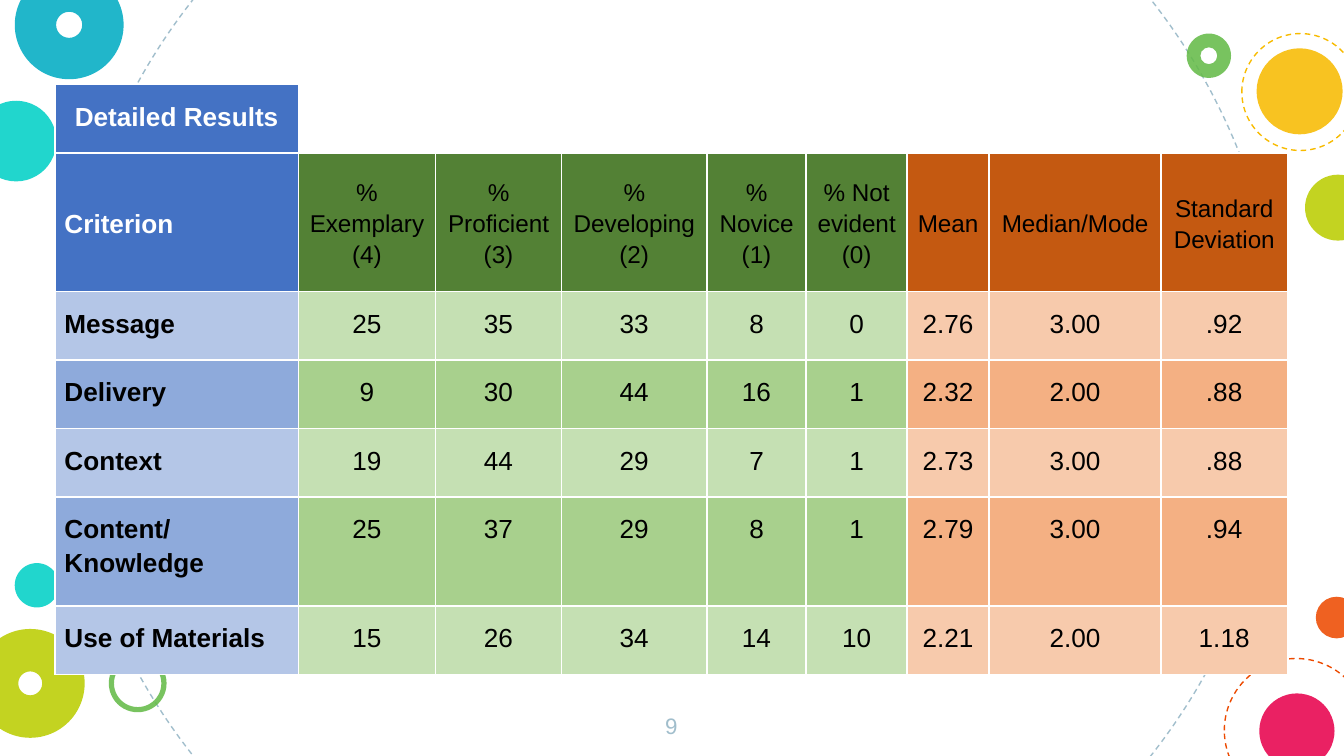
"""Build the slide with the detailed results per criterion."""
import lxml.etree
import pptx
import pptx.dml.color
import pptx.enum.dml
import pptx.enum.shapes
import pptx.enum.text
import pptx.oxml.ns
import pptx.util

Inches = pptx.util.Inches
Pt = pptx.util.Pt
Align = pptx.enum.text.PP_ALIGN
Anchor = pptx.enum.text.MSO_ANCHOR
Kind = pptx.enum.shapes.MSO_SHAPE
qn = pptx.oxml.ns.qn

COLORS = {
    "white": "FFFFFF", "black": "000000", "gray": "A1BECC",
    "aqua": "00D1C6", "teal": "00ACC3", "lime": "BBCD00", "leaf": "65BB48",
    "gold": "F8BB00", "orange": "ED4A00", "pink": "E8004C",
    "blue": "4472C4", "green": "538135", "rust": "C45911",
    "blue light": "B4C6E7", "green light": "C5E0B3", "rust light": "F7CAAC",
    "blue mid": "8EAADB", "green mid": "A8D08D", "rust mid": "F4B083",
}
RINGS = [
    (0.46, -1.73, 9.08, "gray"),
    (9.11, 4.9, 1.07, "orange"),
    (9.24, 0.25, 0.87, "gold"),
]
DOTS = [
    (-0.18, 0.75, 0.6, "aqua"),
    (9.79, 4.44, 0.31, "orange"),
    (9.37, 5.16, 0.56, "pink"),
    (9.35, 0.36, 0.64, "gold"),
    (9.71, 1.3, 0.49, "lime"),
    (0.11, 4.19, 0.33, "aqua"),
]
DONUTS = [
    (0.11, -0.22, 0.81, "teal", 0.38),
    (0.81, 4.87, 0.43, "leaf", 0.09),
    (-0.18, 4.68, 0.81, "lime", 0.39),
    (8.83, 0.25, 0.33, "leaf", 0.31),
]
WIDTHS = [1.81, 1.02, 0.94, 1.08, 0.74, 0.75, 0.61, 1.28, 0.94]
HEIGHTS = [0.51, 1.03, 0.51, 0.51, 0.51, 0.81, 0.51]
HUES = ["blue"] + ["green"] * 5 + ["rust"] * 3
HEADS = ["Criterion", "% Exemplary (4)", "% Proficient (3)", "% Developing (2)",
         "% Novice (1)", "% Not evident (0)", "Mean", "Median/Mode",
         "Standard Deviation"]
SCORES = [
    ["Message", "25", "35", "33", "8", "0", "2.76", "3.00", ".92"],
    ["Delivery", "9", "30", "44", "16", "1", "2.32", "2.00", ".88"],
    ["Context", "19", "44", "29", "7", "1", "2.73", "3.00", ".88"],
    ["Content/\vKnowledge", "25", "37", "29", "8", "1", "2.79", "3.00", ".94"],
    ["Use of Materials", "15", "26", "34", "14", "10", "2.21", "2.00", "1.18"],
]


def color(name):
    """Return the named colour."""
    return pptx.dml.color.RGBColor.from_string(COLORS[name])


def add_round(slide, kind, left, top, size):
    """Add a round shape without shadow."""
    shape = slide.shapes.add_shape(
        kind, Inches(left), Inches(top), Inches(size), Inches(size))
    shape.shadow.inherit = False
    return shape


def add_ring(slide, left, top, size, hue):
    """Add a dashed circle."""
    ring = add_round(slide, Kind.OVAL, left, top, size)
    ring.fill.background()
    ring.line.color.rgb = color(hue)
    ring.line.width = Pt(0.75)
    ring.line.dash_style = pptx.enum.dml.MSO_LINE.DASH


def add_disc(slide, left, top, size, hue, band=None):
    """Add a translucent dot, or a donut when a band is given."""
    kind = Kind.DONUT if band else Kind.OVAL
    disc = add_round(slide, kind, left, top, size)
    if band:
        disc.adjustments[0] = band
    disc.fill.solid()
    disc.fill.fore_color.rgb = color(hue)
    disc.line.fill.background()
    tint = disc.fill._xPr.find(".//" + qn("a:srgbClr"))
    lxml.etree.SubElement(tint, qn("a:alpha"), val="87000")


def style_text(para, size, hue, bold=False, align=Align.CENTER):
    """Format a paragraph with its runs and line breaks."""
    para.alignment = align
    for run in para.runs:
        run.font.name = "Arial"
        run.font.size = Pt(size)
        run.font.bold = bold
        run.font.color.rgb = color(hue)
    for gap in para._p.findall(qn("a:br")):
        lxml.etree.SubElement(gap, qn("a:rPr"), sz=str(size * 100))


def add_edges(cell, drawn="LRTB"):
    """Draw white borders on the given sides and clear the others."""
    props = cell._tc.get_or_add_tcPr()
    for side in "LRTB":
        edge = lxml.etree.SubElement(props, qn("a:ln" + side), w=str(Pt(1)))
        if side in drawn:
            fill = lxml.etree.SubElement(edge, qn("a:solidFill"))
            lxml.etree.SubElement(fill, qn("a:srgbClr"), val=COLORS["white"])
        else:
            lxml.etree.SubElement(edge, qn("a:noFill"))


def fill_cell(cell, text, back, size, hue, bold, align):
    """Set the text, borders and fill of a cell."""
    cell.margin_left = cell.margin_right = Inches(0.07)
    cell.margin_top = cell.margin_bottom = Inches(0.1)
    add_edges(cell)
    cell.fill.solid()
    cell.fill.fore_color.rgb = color(back)
    para = cell.text_frame.paragraphs[0]
    para.text = text
    para.line_spacing = 1.15
    style_text(para, size, hue, bold, align)


def add_grid(slide):
    """Add the table of results."""
    table = slide.shapes.add_table(
        len(HEIGHTS), len(WIDTHS), Inches(0.41), Inches(0.63),
        Inches(sum(WIDTHS)), Inches(sum(HEIGHTS))).table
    table.first_row = table.horz_banding = False
    for col, width in zip(table.columns, WIDTHS):
        col.width = Inches(width)
    for row, height in zip(table.rows, HEIGHTS):
        row.height = Inches(height)

    fill_cell(table.cell(0, 0), "Detailed Results", "blue", 14, "white",
              True, Align.CENTER)
    blank = table.cell(0, 1)
    blank.merge(table.cell(0, len(WIDTHS) - 1))
    for c in range(1, len(WIDTHS)):
        cell = table.cell(0, c)
        add_edges(cell, "LB" if c == 1 else "B")
        cell.fill.background()

    for r, texts in enumerate([HEADS] + SCORES):
        head = r == 0
        shade = "" if head else (" light" if r % 2 else " mid")
        for c, text in enumerate(texts):
            first = c == 0
            cell = table.cell(r + 1, c)
            fill_cell(cell, text, HUES[c] + shade,
                      13 if head and not first else 14,
                      "white" if head and first else "black",
                      first, Align.LEFT if first else Align.CENTER)
            if head:
                cell.vertical_anchor = Anchor.MIDDLE


def add_number(slide):
    """Add the slide number."""
    box = slide.shapes.add_textbox(
        Inches(4.74), Inches(5.2), Inches(0.51), Inches(0.43))
    frame = box.text_frame
    frame.word_wrap = True
    frame.margin_left = frame.margin_right = Inches(0.1)
    frame.margin_top = frame.margin_bottom = Inches(0.1)
    frame.text = "9"
    style_text(frame.paragraphs[0], 12, "gray")


def main():
    """Build and save the deck."""
    deck = pptx.Presentation()
    deck.slide_width = Inches(10)
    deck.slide_height = deck.slide_width * 9 // 16
    slide = deck.slides.add_slide(deck.slide_layouts[6])
    for ring in RINGS:
        add_ring(slide, *ring)
    for disc in DOTS + DONUTS:
        add_disc(slide, *disc)
    add_number(slide)
    add_grid(slide)
    deck.save("out.pptx")


if __name__ == "__main__":
    main()
